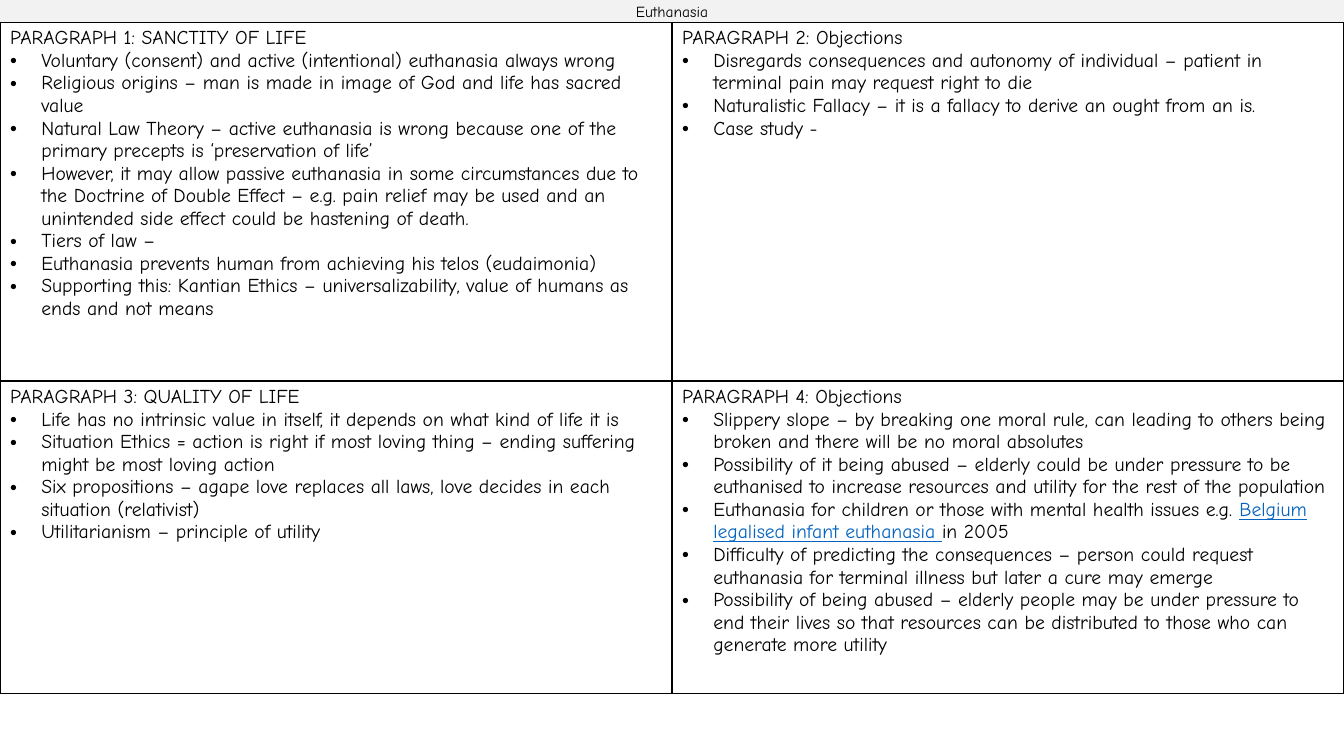
from dataclasses import dataclass

from lxml import etree
from pptx import Presentation
from pptx.dml.color import RGBColor
from pptx.enum.shapes import MSO_SHAPE
from pptx.enum.text import MSO_ANCHOR, PP_ALIGN
from pptx.oxml.ns import qn
from pptx.util import Inches, Pt

RECTANGLE = MSO_SHAPE.RECTANGLE
MIDDLE = MSO_ANCHOR.MIDDLE
CENTER = PP_ALIGN.CENTER


@dataclass(frozen=True)
class Theme:
    font: str = "Comic Neue"
    ink: str = "000000"
    link: str = "0563C1"
    banner: str = "F2F2F2"
    paper: str = "FFFFFF"
    title_size: int = 11
    body_size: int = 14
    border: int = 1
    indent: float = 0.31


THEME = Theme()
WIDTH, HEIGHT = 13.33, 7.5
BANNER_HEIGHT = 0.22
ROW_HEIGHTS = (3.56, 3.1)
COLUMNS = 2

PARAGRAPHS = [
    ("PARAGRAPH 1: SANCTITY OF LIFE", [
        "Voluntary (consent) and active (intentional) euthanasia always wrong",
        "Religious origins – man is made in image of God and life has sacred value",
        "Natural Law Theory – active euthanasia is wrong because one of the primary "
        "precepts is ‘preservation of life’",
        "However, it may allow passive euthanasia in some circumstances due to the "
        "Doctrine of Double Effect – e.g. pain relief may be used and an unintended "
        "side effect could be hastening of death.",
        "Tiers of law –",
        "Euthanasia prevents human from achieving his telos (eudaimonia)",
        "Supporting this: Kantian Ethics – universalizability, value of humans as "
        "ends and not means",
    ]),
    ("PARAGRAPH 2: Objections", [
        "Disregards consequences and autonomy of individual – patient in terminal "
        "pain may request right to die",
        "Naturalistic Fallacy – it is a fallacy to derive an ought from an is.",
        "Case study -",
    ]),
    ("PARAGRAPH 3: QUALITY OF LIFE", [
        "Life has no intrinsic value in itself, it depends on what kind of life it is",
        "Situation Ethics = action is right if most loving thing – ending suffering "
        "might be most loving action",
        "Six propositions – agape love replaces all laws, love decides in each "
        "situation (relativist)",
        "Utilitarianism – principle of utility",
    ]),
    ("PARAGRAPH 4: Objections", [
        "Slippery slope – by breaking one moral rule, can leading to others being "
        "broken and there will be no moral absolutes",
        "Possibility of it being abused – elderly could be under pressure to be "
        "euthanised to increase resources and utility for the rest of the population",
        ("Euthanasia for children or those with mental health issues e.g. ",
         "Belgium legalised infant euthanasia ", "in 2005"),
        "Difficulty of predicting the consequences – person could request euthanasia "
        "for terminal illness but later a cure may emerge",
        "Possibility of being abused – elderly people may be under pressure to end "
        "their lives so that resources can be distributed to those who can generate "
        "more utility",
    ]),
]


def rgb(color):
    return RGBColor.from_string(color)


def set_all(obj, values):
    for name, value in values.items():
        setattr(obj, name, value)


def add_run(p, text, size, color=THEME.ink, underline=False):
    r = p.add_run()
    r.text = text
    set_all(r.font, {"name": THEME.font, "size": Pt(size), "underline": underline})
    r.font.color.rgb = rgb(color)


def add_bullet(tf, item):
    p = tf.add_paragraph()
    pPr = p._p.get_or_add_pPr()
    indent = Inches(THEME.indent)
    pPr.set("marL", str(indent))
    pPr.set("indent", str(-indent))
    etree.SubElement(pPr, qn("a:buFont"), typeface="Arial")
    etree.SubElement(pPr, qn("a:buChar"), char="•")
    if isinstance(item, str):
        add_run(p, item, THEME.body_size)
    else:
        before, link, after = item
        add_run(p, before, THEME.body_size)
        add_run(p, link, THEME.body_size, THEME.link, True)
        add_run(p, after, THEME.body_size)


def add_borders(cell):
    tcPr = cell._tc.get_or_add_tcPr()
    for i, side in enumerate(("lnL", "lnR", "lnT", "lnB")):
        ln = etree.Element(qn(f"a:{side}"), w=str(Pt(THEME.border)))
        fill = etree.SubElement(ln, qn("a:solidFill"))
        etree.SubElement(fill, qn("a:srgbClr"), val=THEME.ink)
        tcPr.insert(i, ln)


def fill_cell(cell, heading, bullets):
    cell.fill.solid()
    cell.fill.fore_color.rgb = rgb(THEME.paper)
    add_borders(cell)
    tf = cell.text_frame
    add_run(tf.paragraphs[0], heading, THEME.body_size)
    for item in bullets:
        add_bullet(tf, item)


def add_banner(s, text):
    sp = s.shapes.add_shape(RECTANGLE, 0, 0, Inches(WIDTH), Inches(BANNER_HEIGHT))
    sp.shadow.inherit = False
    sp.fill.solid()
    sp.fill.fore_color.rgb = rgb(THEME.banner)
    sp.line.fill.background()
    tf = sp.text_frame
    set_all(tf, {"word_wrap": True, "vertical_anchor": MIDDLE,
                 "margin_top": 0, "margin_bottom": 0})
    p = tf.paragraphs[0]
    p.alignment = CENTER
    add_run(p, text, THEME.title_size)


def add_essay_grid(s, paragraphs):
    table = s.shapes.add_table(
        len(ROW_HEIGHTS), COLUMNS, 0, Inches(BANNER_HEIGHT),
        Inches(WIDTH), Inches(sum(ROW_HEIGHTS))).table
    set_all(table, {"first_row": False, "horz_banding": False})
    for row, height in zip(table.rows, ROW_HEIGHTS):
        row.height = Inches(height)
    for cell, (heading, bullets) in zip(table.iter_cells(), paragraphs):
        fill_cell(cell, heading, bullets)


def main():
    prs = Presentation()
    set_all(prs, {"slide_width": Inches(WIDTH), "slide_height": Inches(HEIGHT)})
    s = prs.slides.add_slide(prs.slide_layouts[6])
    add_banner(s, "Euthanasia")
    add_essay_grid(s, PARAGRAPHS)
    prs.save("out.pptx")


if __name__ == "__main__":
    main()
